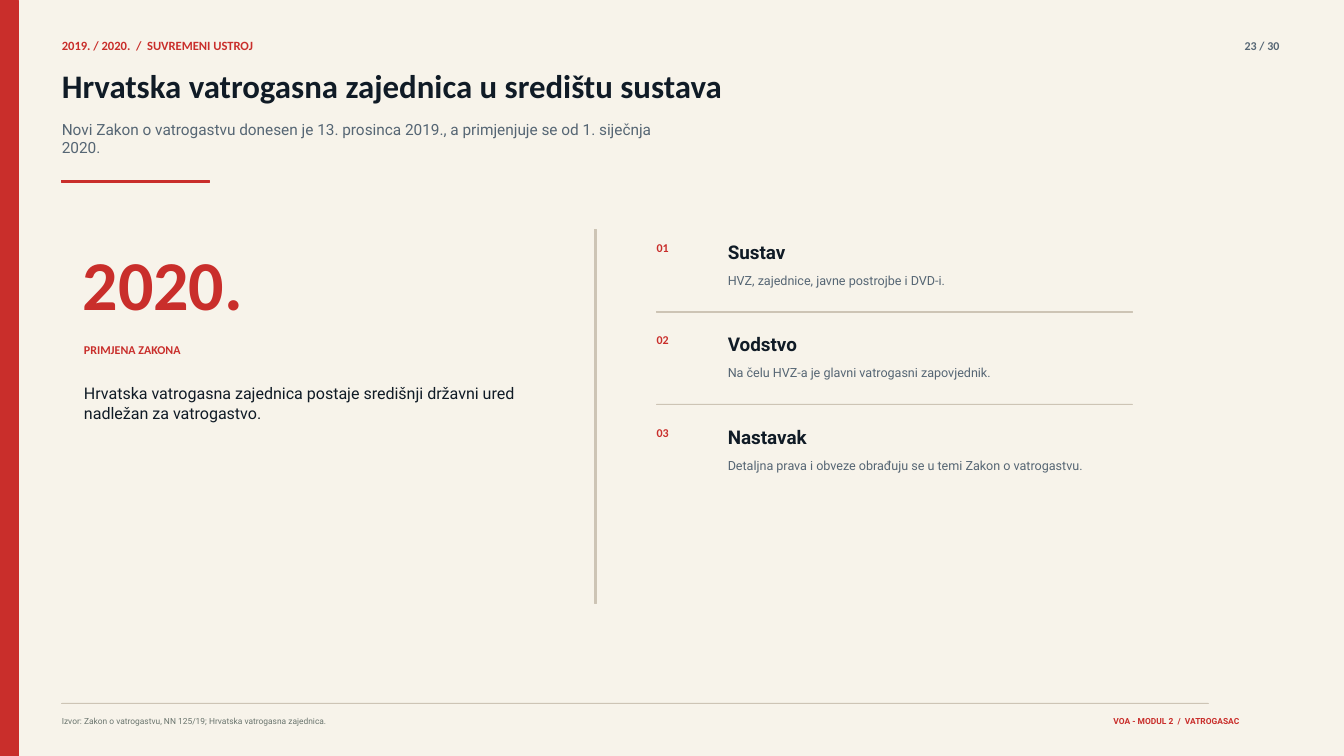
from dataclasses import dataclass

from pptx import Presentation
from pptx.dml.color import RGBColor
from pptx.enum.shapes import MSO_SHAPE
from pptx.enum.text import MSO_ANCHOR, MSO_AUTO_SIZE, PP_ALIGN
from pptx.util import Inches, Pt

RED, INK, SLATE, SAND = "C92E2B", "101B26", "566674", "CDC4B5"
CREAM, OLIVE = "F7F3EA", "6A756E"
HEAD, BODY = "Calibri", "Roboto"
MARGIN = 0.92
STAT_X = 1.25
LIST_X, LIST_TEXT_X, LIST_Y, LIST_PITCH = 9.77, 10.83, 3.58, 1.375


@dataclass(frozen=True)
class Style:
    font: str
    size: float
    color: str
    bold: bool = False
    align: PP_ALIGN = PP_ALIGN.LEFT


@dataclass(frozen=True)
class Topic:
    title: str
    detail: str


KICKER = Style(HEAD, 13.5, RED, True)
PAGE = Style(HEAD, 12.8, SLATE, True, PP_ALIGN.RIGHT)
TITLE = Style(HEAD, 35.2, INK, True)
SUBTITLE = Style(BODY, 16.5, SLATE)
SOURCE = Style(BODY, 9, OLIVE)
MODULE = Style(BODY, 9, RED, True, PP_ALIGN.RIGHT)
STAT = Style(HEAD, 75, RED, True)
LABEL = Style(HEAD, 12.8, RED, True)
STATEMENT = Style(BODY, 17.2, INK)
TOPIC_TITLE = Style(BODY, 20.2, INK, True)
TOPIC_DETAIL = Style(BODY, 13.5, SLATE)

TOPICS = [
    Topic("Sustav", "HVZ, zajednice, javne postrojbe i DVD-i."),
    Topic("Vodstvo", "Na čelu HVZ-a je glavni vatrogasni zapovjednik."),
    Topic("Nastavak", "Detaljna prava i obveze obrađuju se u temi Zakon o vatrogastvu."),
]


def rgb(color: str) -> RGBColor:
    return RGBColor.from_string(color)


def fill_text(shape, text: str, style: Style) -> None:
    tf = shape.text_frame
    tf.word_wrap = True
    tf.auto_size = MSO_AUTO_SIZE.NONE
    tf.vertical_anchor = MSO_ANCHOR.TOP
    tf.margin_left = tf.margin_top = tf.margin_right = tf.margin_bottom = 0
    p = tf.paragraphs[0]
    p.text = text
    p.alignment = style.align
    p.font.name = style.font
    p.font.size = Pt(style.size)
    p.font.bold = style.bold
    p.font.color.rgb = rgb(style.color)


def add_text(s, x: float, y: float, w: float, h: float, text: str, style: Style) -> None:
    box = s.shapes.add_textbox(Inches(x), Inches(y), Inches(w), Inches(h))
    fill_text(box, text, style)


def add_bar(s, x: float, y: float, w: float, h: float, color: str) -> None:
    bar = s.shapes.add_shape(MSO_SHAPE.RECTANGLE, Inches(x), Inches(y), Inches(w), Inches(h))
    bar.shadow.inherit = False
    bar.fill.solid()
    bar.fill.fore_color.rgb = rgb(color)
    bar.line.color.rgb = rgb(color)
    bar.line.width = Pt(0)


def add_header(s) -> None:
    add_bar(s, 0, 0, 0.27, 11.25, RED)
    add_text(s, MARGIN, 0.56, 12.81, 0.23, "2019. / 2020.  /  SUVREMENI USTROJ", KICKER)
    add_text(s, 17.48, 0.57, 1.56, 0.21, "23 / 30", PAGE)
    title = s.shapes.title
    title.left, title.top = Inches(MARGIN), Inches(0.98)
    title.width, title.height = Inches(18.12), Inches(0.62)
    fill_text(title, "Hrvatska vatrogasna zajednica u središtu sustava", TITLE)
    add_text(s, MARGIN, 1.78, 9.33, 0.71,
             "Novi Zakon o vatrogastvu donesen je 13. prosinca 2019., "
             "a primjenjuje se od 1. siječnja 2020.", SUBTITLE)
    add_bar(s, MARGIN, 2.68, 2.19, 0.04, RED)


def add_footer(s) -> None:
    add_bar(s, MARGIN, 10.46, 17.06, 0.01, SAND)
    add_text(s, MARGIN, 10.65, 14.17, 0.16,
             "Izvor: Zakon o vatrogastvu, NN 125/19; Hrvatska vatrogasna zajednica.", SOURCE)
    add_text(s, 15.42, 10.65, 3.02, 0.16, "VOA - MODUL 2  /  VATROGASAC", MODULE)


def add_key_year(s) -> None:
    add_text(s, 1.23, 3.58, 6.88, 1.29, "2020.", STAT)
    add_text(s, STAT_X, 5.1, 6.46, 0.22, "PRIMJENA ZAKONA", LABEL)
    add_text(s, STAT_X, 5.71, 6.46, 0.75,
             "Hrvatska vatrogasna zajednica postaje središnji državni ured "
             "nadležan za vatrogastvo.", STATEMENT)


def add_topics(s, topics: list[Topic]) -> None:
    for i, topic in enumerate(topics):
        y = LIST_Y + i * LIST_PITCH
        if i:
            add_bar(s, LIST_X, y - 0.32, 7.08, 0.01, SAND)
        add_text(s, LIST_X, y, 0.69, 0.22, f"{i + 1:02}", LABEL)
        add_text(s, LIST_TEXT_X, y, 6.35, 0.41, topic.title, TOPIC_TITLE)
        add_text(s, LIST_TEXT_X, y + 0.48, 6.41, 0.28, topic.detail, TOPIC_DETAIL)


def main() -> None:
    prs = Presentation()
    prs.slide_width, prs.slide_height = Inches(20), Inches(11.25)
    s = prs.slides.add_slide(prs.slide_layouts.get_by_name("Title Only"))
    s.background.fill.solid()
    s.background.fill.fore_color.rgb = rgb(CREAM)
    add_header(s)
    add_footer(s)
    add_bar(s, 8.85, 3.41, 0.02, 5.57, SAND)
    add_key_year(s)
    add_topics(s, TOPICS)
    prs.save("out.pptx")


if __name__ == "__main__":
    main()
